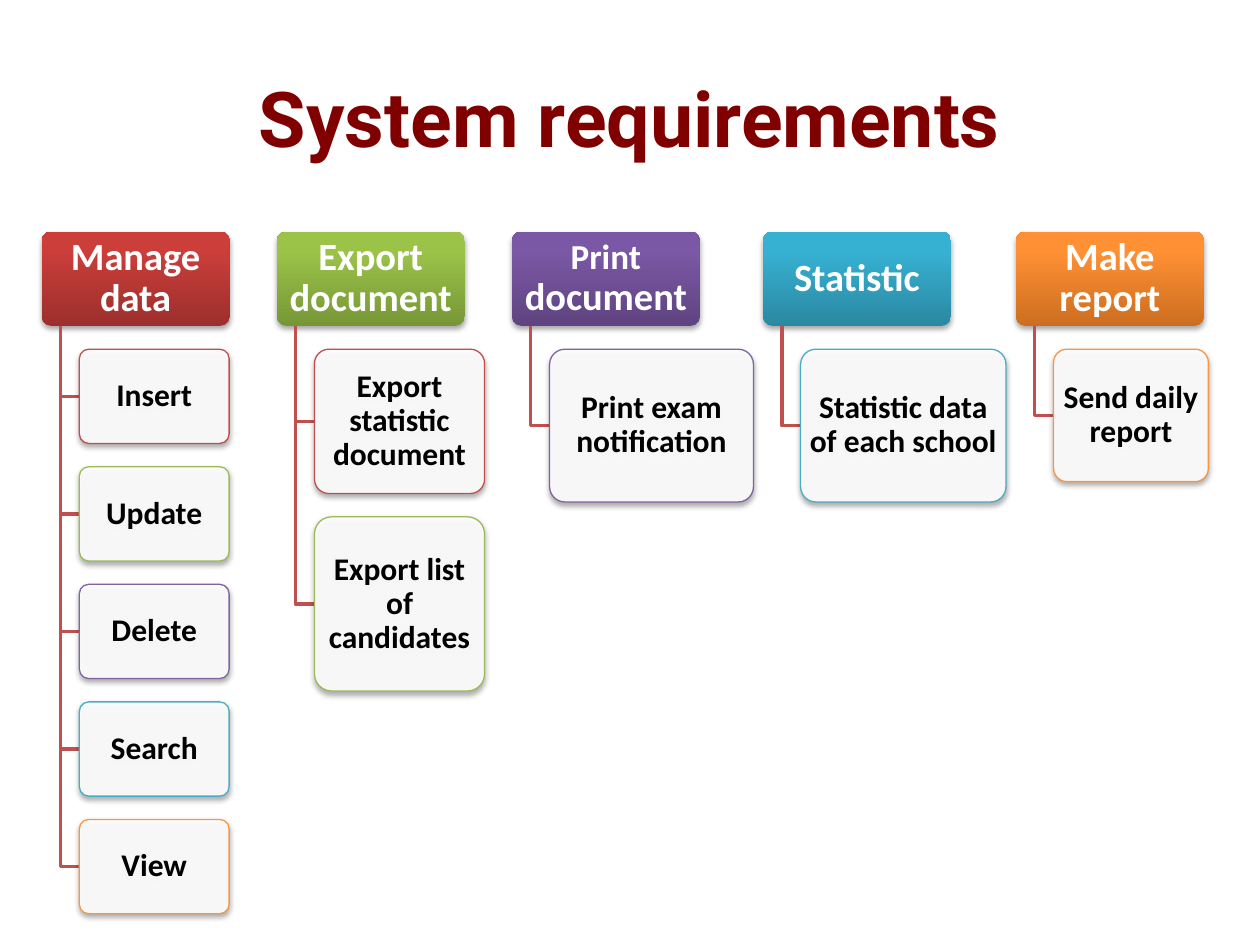
from pptx import Presentation
from pptx.dml.color import RGBColor
from pptx.enum.shapes import MSO_SHAPE
from pptx.enum.text import MSO_ANCHOR, PP_ALIGN
from pptx.oxml import parse_xml
from pptx.oxml.ns import nsdecls, qn
from pptx.util import Cm, Pt

ROUNDED = MSO_SHAPE.ROUNDED_RECTANGLE
MIDDLE = MSO_ANCHOR.MIDDLE
CENTER = PP_ALIGN.CENTER

RED, GREEN, PURPLE, TEAL, ORANGE = "C0504D", "9BBB59", "8064A2", "4BACC6", "F79646"
TITLE = "System requirements"
COLUMNS = [
    {"left": 0.84, "heading": [("Manage data", 22)], "gradient": ("9C2F2D", "CB3E3A"), "width": 3.02,
     "items": [("Insert", 1.9, RED), ("Update", 1.9, GREEN), ("Delete", 1.9, PURPLE),
               ("Search", 1.9, TEAL), ("View", 1.9, ORANGE)]},
    {"left": 5.58, "heading": [("Export document", 22)], "gradient": ("779737", "9BC348"), "width": 3.43,
     "items": [("Export statistic document", 2.91, RED), ("Export list of candidates", 3.51, GREEN)]},
    {"left": 10.32, "heading": [("Print ", 20), ("document", 22)], "gradient": ("5F4480", "7B58A6"),
     "width": 4.11, "items": [("Print exam notification", 3.08, PURPLE)]},
    {"left": 15.38, "heading": [("Statistic", 22)], "gradient": ("2A88A2", "37B1D2"), "width": 4.14,
     "items": [("Statistic data of each school", 3.08, TEAL)]},
    {"left": 20.48, "heading": [("Make report", 22)], "gradient": ("CC6E20", "FF9034"), "width": 3.12,
     "items": [("Send daily report", 2.67, ORANGE)]},
]
HEADING_TOP, HEADING_WIDTH, HEADING_HEIGHT = 4.67, 3.79, 1.9
GAP, INDENT = 0.47, 0.38


def color(value):
    return RGBColor.from_string(value)


def write(paragraph, runs, font_name, text_color):
    paragraph.alignment = CENTER
    for text, size in runs:
        run = paragraph.add_run()
        run.text = text
        run.font.name = font_name
        run.font.size = Pt(size)
        run.font.bold = True
        run.font.color.rgb = color(text_color)


def add_box(slide, left, top, width, height, runs, text_color, inset):
    shape = slide.shapes.add_shape(ROUNDED, Cm(left), Cm(top), Cm(width), Cm(height))
    shape.adjustments[0] = 0.1
    frame = shape.text_frame
    frame.word_wrap = True
    frame.vertical_anchor = MIDDLE
    frame.margin_left = frame.margin_right = Cm(inset)
    frame.margin_top = frame.margin_bottom = Cm(0)
    paragraph = frame.paragraphs[0]
    paragraph.line_spacing = 0.9
    write(paragraph, runs, "Calibri", text_color)
    return shape


def add_shadow(shape):
    shape.shadow.inherit = False
    effects = shape._element.spPr.find(qn("a:effectLst"))
    effects.append(parse_xml(
        f'<a:outerShdw {nsdecls("a")} blurRad="40000" dist="23000" dir="5400000" rotWithShape="0">'
        '<a:srgbClr val="000000"><a:alpha val="35000"/></a:srgbClr></a:outerShdw>'))


def add_heading(slide, column):
    shape = add_box(slide, column["left"], HEADING_TOP, HEADING_WIDTH, HEADING_HEIGHT,
                    column["heading"], "FFFFFF", 0.07)
    shape.fill.gradient()
    shape.fill.gradient_angle = 90
    for stop, value, position in zip(shape.fill.gradient_stops, column["gradient"], (0, 0.8)):
        stop.color.rgb = color(value)
        stop.position = position
    shape.line.fill.background()
    add_shadow(shape)


def add_branch(slide, stem, start, middle):
    builder = slide.shapes.build_freeform(Cm(stem), Cm(start))
    builder.add_line_segments([(Cm(stem), Cm(middle)), (Cm(stem + INDENT), Cm(middle))], close=False)
    branch = builder.convert_to_shape()
    branch.fill.background()
    branch.line.color.rgb = color(RED)
    branch.line.width = Pt(2)
    branch.shadow.inherit = False


def add_item(slide, left, top, width, height, text, outline):
    shape = add_box(slide, left, top, width, height, [(text, 18)], "000000", 0)
    shape.fill.solid()
    shape.fill.fore_color.rgb = color("FFFFFF")
    fill_color = shape._element.spPr.find(qn("a:solidFill")).find(qn("a:srgbClr"))
    fill_color.append(parse_xml(f'<a:alpha {nsdecls("a")} val="90000"/>'))
    shape.line.color.rgb = color(outline)
    shape.line.width = Pt(0.75)
    add_shadow(shape)


def add_column(slide, column):
    add_heading(slide, column)
    stem = column["left"] + INDENT
    bottom = HEADING_TOP + HEADING_HEIGHT
    top = bottom + GAP
    for text, height, outline in column["items"]:
        add_branch(slide, stem, bottom, top + height / 2)
        add_item(slide, stem + INDENT, top, column["width"], height, text, outline)
        top += height + GAP


def main():
    presentation = Presentation()
    presentation.slide_width = Cm(25.4)
    presentation.slide_height = Cm(19.05)
    slide = presentation.slides.add_slide(presentation.slide_layouts[5])
    title = slide.shapes.title
    title.left, title.top, title.width, title.height = Cm(1.27), Cm(0.76), Cm(22.86), Cm(3.18)
    title.text_frame.vertical_anchor = MIDDLE
    write(title.text_frame.paragraphs[0], [(TITLE, 44)], "Roboto", "800000")
    for column in COLUMNS:
        add_column(slide, column)
    presentation.save("out.pptx")


if __name__ == "__main__":
    main()
